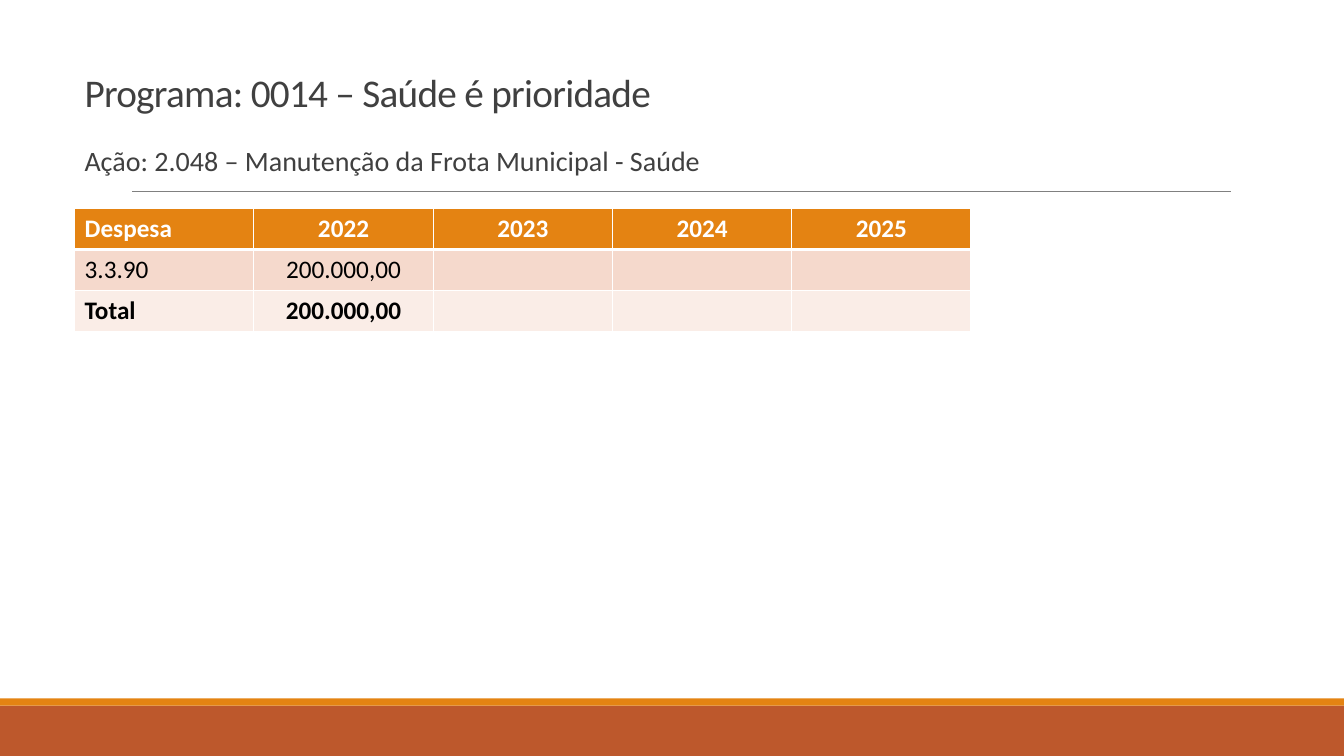
"""Builds the budget slide for the municipal health fleet action."""
from dataclasses import dataclass

from lxml.etree import SubElement
from pptx import Presentation
from pptx.dml.color import RGBColor
from pptx.enum.shapes import MSO_CONNECTOR, MSO_SHAPE
from pptx.enum.text import MSO_ANCHOR, PP_ALIGN
from pptx.oxml.ns import qn
from pptx.util import Inches, Pt


@dataclass(frozen=True)
class Theme:
    font: str = "Calibri"
    orange: str = "E48312"
    rust: str = "BD582C"
    rule: str = "808080"
    text: str = "404040"
    white: str = "FFFFFF"
    black: str = "000000"
    band: str = "F5D9CC"
    total: str = "FAEDE7"
    title_size: int = 28
    body_size: int = 20
    table_size: int = 18


def style_run(r, size, color, bold=False):
    r.font.name = theme.font
    r.font.size = Pt(size)
    r.font.bold = bold
    r.font.color.rgb = RGBColor.from_string(color)


def add_border(cell, side, width):
    ln = SubElement(cell._tc.get_or_add_tcPr(), qn(f"a:ln{side}"), w=str(Pt(width)))
    fill = SubElement(ln, qn("a:solidFill"))
    SubElement(fill, qn("a:srgbClr"), val=theme.white)


theme = Theme()
prs = Presentation()
prs.slide_width = Inches(13.33)
prs.slide_height = Inches(7.5)
s = prs.slides.add_slide(prs.slide_layouts[6])

for top, height, color in [(7, 0.5, theme.rust), (6.93, 0.07, theme.orange)]:
    sp = s.shapes.add_shape(
        MSO_SHAPE.RECTANGLE, 0, Inches(top), prs.slide_width, Inches(height))
    sp.shadow.inherit = False
    sp.fill.solid()
    sp.fill.fore_color.rgb = RGBColor.from_string(color)
    sp.line.fill.background()

rule = s.shapes.add_connector(
    MSO_CONNECTOR.STRAIGHT, Inches(1.31), Inches(1.9), Inches(12.21), Inches(1.9))
rule.line.color.rgb = RGBColor.from_string(theme.rule)
rule.line.width = Pt(0.5)
SubElement(rule._element.spPr, qn("a:effectLst"))

headings = [
    ("Programa: 0014 – Saúde é prioridade", (0.74, 0.46, 11.54, 0.74),
     MSO_ANCHOR.BOTTOM, theme.title_size, 0.85, -50),
    ("Ação: 2.048 – Manutenção da Frota Municipal - Saúde", (0.74, 1.41, 9.4, 5.2),
     MSO_ANCHOR.TOP, theme.body_size, 0.9, 0),
]
for text, box, anchor, size, spacing, tracking in headings:
    tf = s.shapes.add_textbox(*map(Inches, box)).text_frame
    tf.word_wrap = True
    tf.vertical_anchor = anchor
    tf.text = text
    p = tf.paragraphs[0]
    p.line_spacing = spacing
    r = p.runs[0]
    style_run(r, size, theme.text)
    r.font._element.set("spc", str(tracking))

rows = [
    (["Despesa", "2022", "2023", "2024", "2025"], theme.orange, theme.white, True),
    (["3.3.90", "200.000,00", "", "", ""], theme.band, theme.black, False),
    (["Total", "200.000,00", "", "", ""], theme.total, theme.black, True),
]
table = s.shapes.add_table(
    len(rows), 5, Inches(0.74), Inches(2.07), Inches(8.89), Inches(1.22)).table
for i, (values, fill, color, bold) in enumerate(rows):
    for j, value in enumerate(values):
        cell = table.cell(i, j)
        for side in "LRTB":
            under_header = (i, side) in [(0, "B"), (1, "T")]
            add_border(cell, side, 3 if under_header else 1)
        cell.fill.solid()
        cell.fill.fore_color.rgb = RGBColor.from_string(fill)
        if value:
            cell.text = value
            p = cell.text_frame.paragraphs[0]
            p.alignment = PP_ALIGN.CENTER if j else PP_ALIGN.LEFT
            style_run(p.runs[0], theme.table_size, color, bold)

prs.save("out.pptx")
